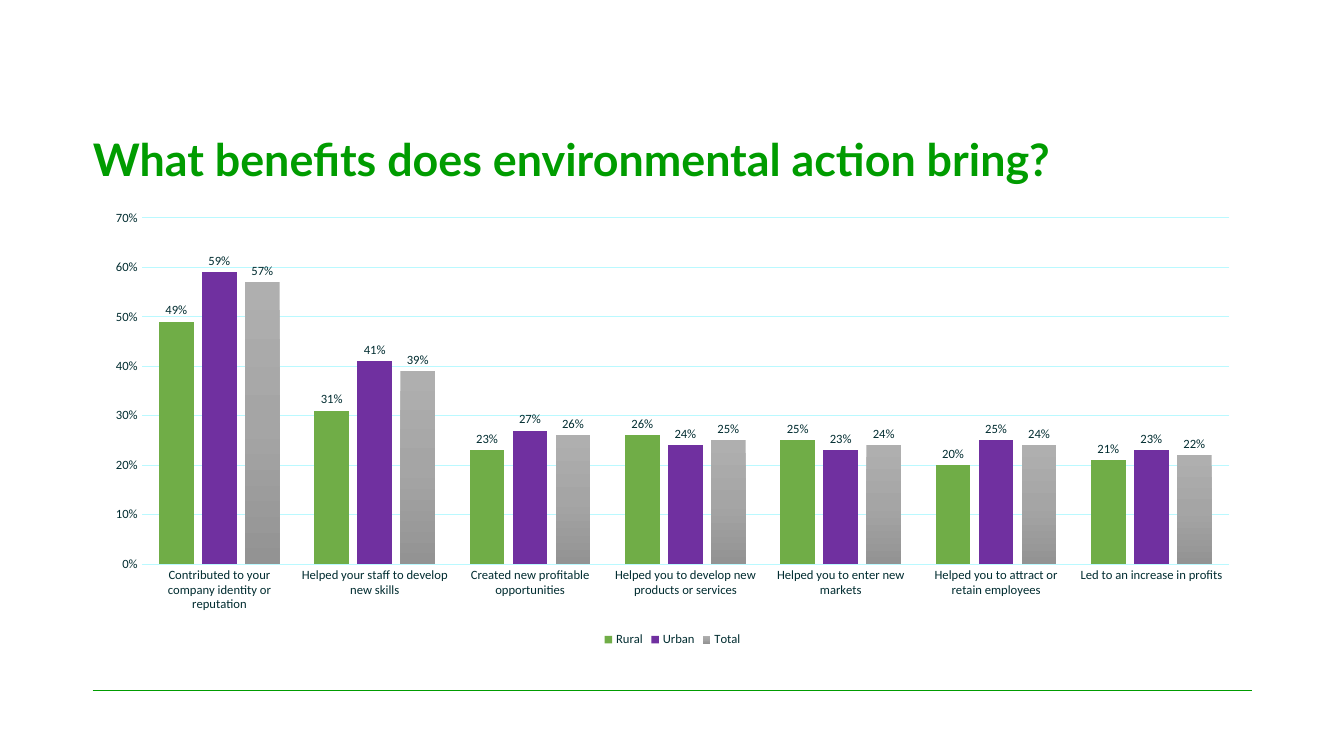
import copy

import lxml.etree
import pptx
import pptx.chart.data
import pptx.dml.color
import pptx.enum.chart
import pptx.enum.shapes
import pptx.enum.text
import pptx.oxml.ns
import pptx.util

Inches = pptx.util.Inches
Pt = pptx.util.Pt
RGBColor = pptx.dml.color.RGBColor

GREEN = RGBColor(0x00, 0x9C, 0x00)
INK = RGBColor(0x00, 0x2C, 0x30)
PALE_CYAN = RGBColor(0xBA, 0xF9, 0xFF)
RURAL_GREEN = RGBColor(0x70, 0xAD, 0x47)
URBAN_PURPLE = RGBColor(0x70, 0x30, 0xA0)
TOTAL_GREYS = [
    (0, RGBColor(0xAF, 0xAF, 0xAF)),
    (0.5, RGBColor(0xA5, 0xA5, 0xA5)),
    (1, RGBColor(0x93, 0x93, 0x93)),
]

LEFT, WIDTH = Inches(0.92), Inches(11.5)
TITLE_FONT = {"name": "Lato", "size": Pt(32), "bold": True}
CHART_FONT = {"name": "Calibri", "size": Pt(9), "bold": False}

BENEFITS = [
    "Contributed to your company identity or reputation",
    "Helped your staff to develop new skills",
    "Created new profitable opportunities",
    "Helped you to develop new products or services",
    "Helped you to enter new markets",
    "Helped you to attract or retain employees",
    "Led to an increase in profits",
]
SHARES = {
    "Rural": [0.49, 0.31, 0.23, 0.26, 0.25, 0.2, 0.21],
    "Urban": [0.59, 0.41, 0.27, 0.24, 0.23, 0.25, 0.23],
    "Total": [0.57, 0.39, 0.26, 0.25, 0.24, 0.24, 0.22],
}


def set_all(target, values):
    for name, value in values.items():
        setattr(target, name, value)


def style_font(font, values, color):
    set_all(font, values)
    font.color.rgb = color


def style_line(line, color, width):
    line.color.rgb = color
    line.width = Pt(width)


def add_title(page, text):
    title = page.shapes.title
    set_all(title, {"left": LEFT, "top": Inches(0.83),
                    "width": WIDTH, "height": Inches(1.02)})
    frame = title.text_frame
    set_all(frame, {
        "margin_left": 0, "margin_top": 0, "margin_right": 0, "margin_bottom": 0,
        "word_wrap": True,
        "auto_size": pptx.enum.text.MSO_AUTO_SIZE.NONE,
        "vertical_anchor": pptx.enum.text.MSO_ANCHOR.BOTTOM,
    })
    para = frame.paragraphs[0]
    set_all(para, {"alignment": pptx.enum.text.PP_ALIGN.LEFT, "line_spacing": 0.9})
    span = para.add_run()
    span.text = text
    style_font(span.font, TITLE_FONT, GREEN)


def add_footer_rule(page):
    height = Inches(6.85)
    rule = page.shapes.add_connector(
        pptx.enum.shapes.MSO_CONNECTOR.STRAIGHT, LEFT, height, LEFT + WIDTH, height)
    style_line(rule.line, GREEN, 1)
    lxml.etree.SubElement(rule._element.spPr, pptx.oxml.ns.qn("a:effectLst"))


def fill_gradient(series, stops):
    """Fill the series from top to bottom with any number of colour stops."""
    fill = series.format.fill
    fill.gradient()
    fill.gradient_angle = 270
    stop_list = series._element.find(".//" + pptx.oxml.ns.qn("a:gsLst"))
    for _ in stops[2:]:
        stop_list.append(copy.deepcopy(stop_list[0]))
    for stop, (position, color) in zip(fill.gradient_stops, stops):
        stop.position = position
        stop.color.rgb = color


def fill_solid(series, color):
    series.format.fill.solid()
    series.format.fill.fore_color.rgb = color


def style_axes(chart):
    none = pptx.enum.chart.XL_TICK_MARK.NONE
    for axis in (chart.category_axis, chart.value_axis):
        set_all(axis, {"major_tick_mark": none, "minor_tick_mark": none})
        style_font(axis.tick_labels.font, CHART_FONT, INK)
    style_line(chart.category_axis.format.line, PALE_CYAN, 0.75)

    shares = chart.value_axis
    set_all(shares, {"minimum_scale": 0, "maximum_scale": 0.7, "major_unit": 0.1,
                     "has_major_gridlines": True})
    shares.format.line.fill.background()
    style_line(shares.major_gridlines.format.line, PALE_CYAN, 0.75)
    set_all(shares.tick_labels, {"number_format": "0%",
                                 "number_format_is_linked": False})


def style_labels(series):
    labels = series.data_labels
    set_all(labels, {
        "show_value": True,
        "number_format": "0%",
        "number_format_is_linked": False,
        "position": pptx.enum.chart.XL_LABEL_POSITION.OUTSIDE_END,
    })
    style_font(labels.font, CHART_FONT, INK)


def add_benefits_chart(page):
    data = pptx.chart.data.CategoryChartData(number_format="0%")
    data.categories = BENEFITS
    for name, values in SHARES.items():
        data.add_series(name, values)
    chart = page.shapes.add_chart(
        pptx.enum.chart.XL_CHART_TYPE.COLUMN_CLUSTERED,
        LEFT, Inches(2), WIDTH, Inches(4.46), data).chart
    set_all(chart, {"has_title": False, "has_legend": True})
    style_font(chart.font, CHART_FONT, INK)

    set_all(chart.legend, {
        "position": pptx.enum.chart.XL_LEGEND_POSITION.BOTTOM,
        "include_in_layout": False,
    })
    style_font(chart.legend.font, CHART_FONT, INK)
    style_axes(chart)

    plot = chart.plots[0]
    set_all(plot, {"gap_width": 100, "overlap": -24, "vary_by_categories": False})
    rural, urban, total = plot.series
    fill_solid(rural, RURAL_GREEN)
    fill_solid(urban, URBAN_PURPLE)
    fill_gradient(total, TOTAL_GREYS)
    for series in plot.series:
        style_labels(series)


def main():
    deck = pptx.Presentation()
    set_all(deck, {"slide_width": Inches(13.33), "slide_height": Inches(7.5)})
    title_only = deck.slide_layouts[5]
    page = deck.slides.add_slide(title_only)
    add_footer_rule(page)
    add_title(page, "What benefits does environmental action bring?")
    add_benefits_chart(page)
    deck.save("out.pptx")


if __name__ == "__main__":
    main()
